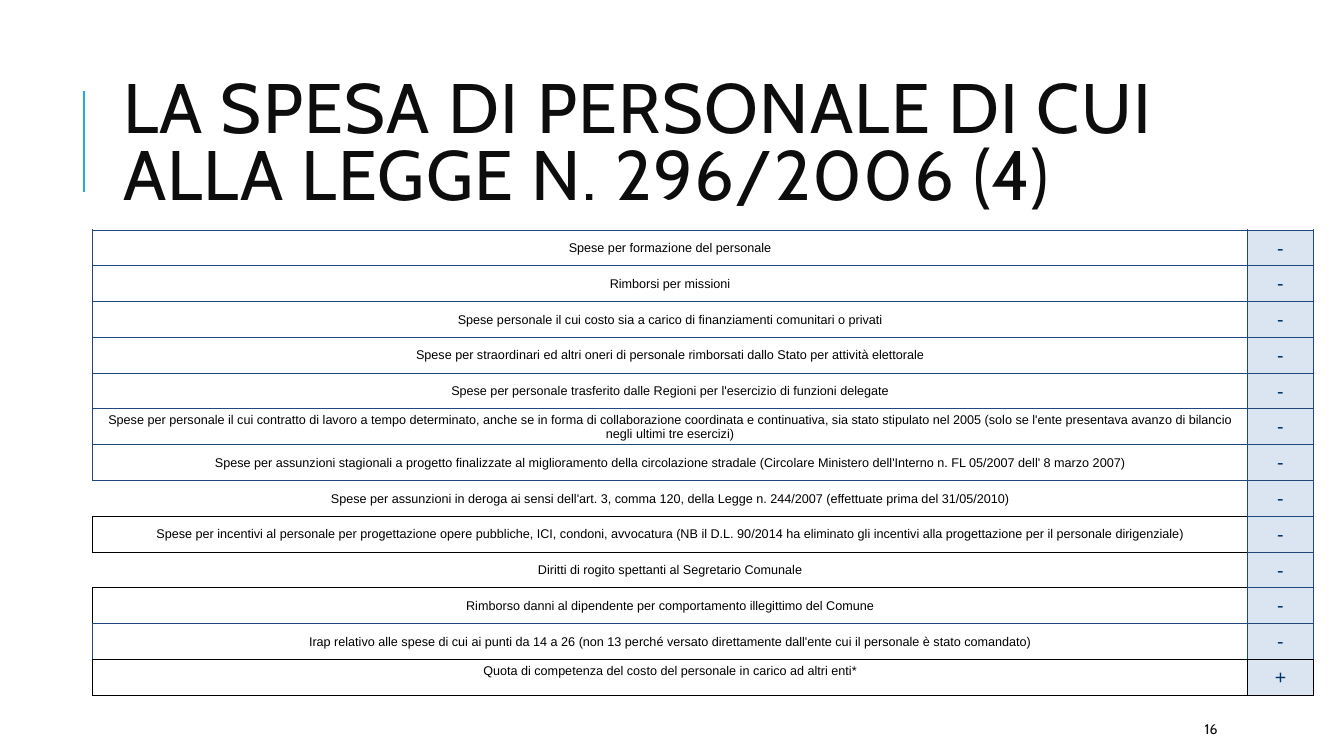
from pptx import Presentation
from pptx.dml.color import RGBColor
from pptx.enum import shapes, text
from pptx.oxml import parse_xml
from pptx.oxml.ns import nsdecls
from pptx.util import Inches, Pt

COLORS = {"accent": "1CADE4", "ink": "0D0D0D", "navy": "1F497D",
          "black": "000000", "sign": "003366", "tint": "DBE5F1"}
TITLE = "LA SPESA DI PERSONALE DI CUI ALLA LEGGE N. 296/2006 (4)"
PAGE_NUMBER = "16"

# label, sign, colour of the label's left edge, colour of its bottom edge
ROWS = [
    ("Spese per formazione del personale", "-", "navy", "navy"),
    ("Rimborsi per missioni", "-", "navy", "navy"),
    ("Spese personale il cui costo sia a carico di finanziamenti comunitari o privati",
     "-", "navy", "navy"),
    ("Spese per straordinari ed altri oneri di personale rimborsati dallo Stato "
     "per attività elettorale", "-", "navy", "navy"),
    ("Spese per personale trasferito dalle Regioni per l'esercizio di funzioni delegate",
     "-", "navy", "navy"),
    ("Spese per personale il cui contratto di lavoro a tempo determinato, anche se in forma "
     "di collaborazione coordinata e continuativa, sia stato stipulato nel 2005 (solo se "
     "l'ente presentava avanzo di bilancio negli ultimi tre esercizi)", "-", "navy", "navy"),
    ("Spese per assunzioni stagionali a progetto finalizzate al miglioramento della "
     "circolazione stradale (Circolare Ministero dell'Interno n. FL 05/2007 "
     "dell' 8 marzo 2007)", "-", "navy", "navy"),
    ("Spese per assunzioni in deroga ai sensi dell'art. 3, comma 120, della Legge "
     "n. 244/2007 (effettuate prima del 31/05/2010)", "-", None, "black"),
    ("Spese per incentivi al personale per progettazione opere pubbliche, ICI, condoni, "
     "avvocatura (NB il D.L. 90/2014 ha eliminato gli incentivi alla progettazione per il "
     "personale dirigenziale)", "-", "black", "black"),
    ("Diritti di rogito spettanti al Segretario Comunale", "-", None, "black"),
    ("Rimborso danni al dipendente per comportamento illegittimo del Comune",
     "-", "black", "navy"),
    ("Irap relativo alle spese di cui ai punti da 14 a 26 (non 13 perché versato "
     "direttamente dall'ente cui il personale è stato comandato)", "-", "navy", "black"),
    ("Quota di competenza del costo del personale in carico ad altri enti*",
     "+", "black", "black"),
]
COLUMNS = (11.45, 0.66)
TABLE_LEFT, TABLE_TOP, TABLE_HEIGHT = 0.92, 2.28, 4.62
LAST = len(ROWS) - 1


def write(frame, words, size, color, font, align=None, spacing=None, insets=None):
    frame.word_wrap = True
    frame.vertical_anchor = text.MSO_ANCHOR.MIDDLE
    if insets:
        (frame.margin_left, frame.margin_top,
         frame.margin_right, frame.margin_bottom) = map(Inches, insets)
    para = frame.paragraphs[0]
    para.alignment, para.line_spacing = align, spacing
    span = para.add_run()
    span.text = words
    span.font.size, span.font.name = Pt(size), font
    span.font.color.rgb = RGBColor.from_string(COLORS[color])
    return span


def set_edges(cell, left, right, top, bottom):
    """Draw the four borders of a cell; None leaves an edge open."""
    props = cell._tc.get_or_add_tcPr()
    for place, (side, color) in enumerate(zip("LRTB", (left, right, top, bottom))):
        paint = (f'<a:solidFill><a:srgbClr val="{COLORS[color]}"/></a:solidFill>'
                 if color else "<a:noFill/>")
        props.insert(place, parse_xml(
            f'<a:ln{side} {nsdecls("a")} w="{Pt(0.5)}">{paint}</a:ln{side}>'))


def add_title(page):
    title = page.shapes.title
    title.left, title.top, title.width, title.height = map(Inches, (1.12, 0.64, 10.63, 1.64))
    span = write(title.text_frame, TITLE, 50, "ink", "Cabin",
                 align=text.PP_ALIGN.LEFT, spacing=0.8)
    span.font._element.set("spc", "100")
    rule = page.shapes.add_connector(shapes.MSO_CONNECTOR.STRAIGHT, Inches(0.83), Inches(1.9),
                                     Inches(0.83), Inches(0.9))
    rule.line.color.rgb = RGBColor.from_string(COLORS["accent"])
    rule.line.width = Pt(1.5)
    rule._element.spPr.append(parse_xml(f'<a:effectLst {nsdecls("a")}/>'))


def add_expense_table(page):
    table = page.shapes.add_table(len(ROWS), len(COLUMNS), Inches(TABLE_LEFT), Inches(TABLE_TOP),
                                  Inches(sum(COLUMNS)), Inches(TABLE_HEIGHT)).table
    table.first_row = table.horz_banding = False
    for column, width in zip(table.columns, COLUMNS):
        column.width = Inches(width)
    label_top = sign_top = "navy"
    for index, (label, sign, left, bottom) in enumerate(ROWS):
        table.rows[index].height = Inches(TABLE_HEIGHT / len(ROWS))
        label_cell, sign_cell = table.rows[index].cells
        divider = "black" if index == LAST else "navy"
        sign_bottom = "black" if index >= LAST - 1 else "navy"
        label_cell.fill.background()
        sign_cell.fill.solid()
        sign_cell.fill.fore_color.rgb = RGBColor.from_string(COLORS["tint"])
        # the closing row sits one half line above the middle
        lift = 0.14 if index == LAST else 0
        write(label_cell.text_frame, label, 9, "black", "Arial",
              align=text.PP_ALIGN.CENTER)
        write(sign_cell.text_frame, sign, 14, "sign", "Arial", align=text.PP_ALIGN.CENTER)
        for cell, below in ((label_cell, lift), (sign_cell, 0)):
            cell.vertical_anchor = text.MSO_ANCHOR.MIDDLE
            cell.margin_left = cell.margin_right = cell.margin_top = Inches(0.01)
            cell.margin_bottom = Inches(below)
        set_edges(label_cell, left, divider, label_top, bottom)
        set_edges(sign_cell, divider, divider, sign_top, sign_bottom)
        label_top, sign_top = bottom, sign_bottom


def main():
    deck = Presentation()
    deck.slide_width, deck.slide_height = Inches(13.33), Inches(7.5)
    page = deck.slides.add_slide(deck.slide_layouts[5])
    add_title(page)
    add_expense_table(page)
    number = page.shapes.add_textbox(*map(Inches, (11.85, 7.08, 1.06, 0.3)))
    write(number.text_frame, PAGE_NUMBER, 10, "ink", "Cabin")
    deck.save("out.pptx")


if __name__ == "__main__":
    main()
